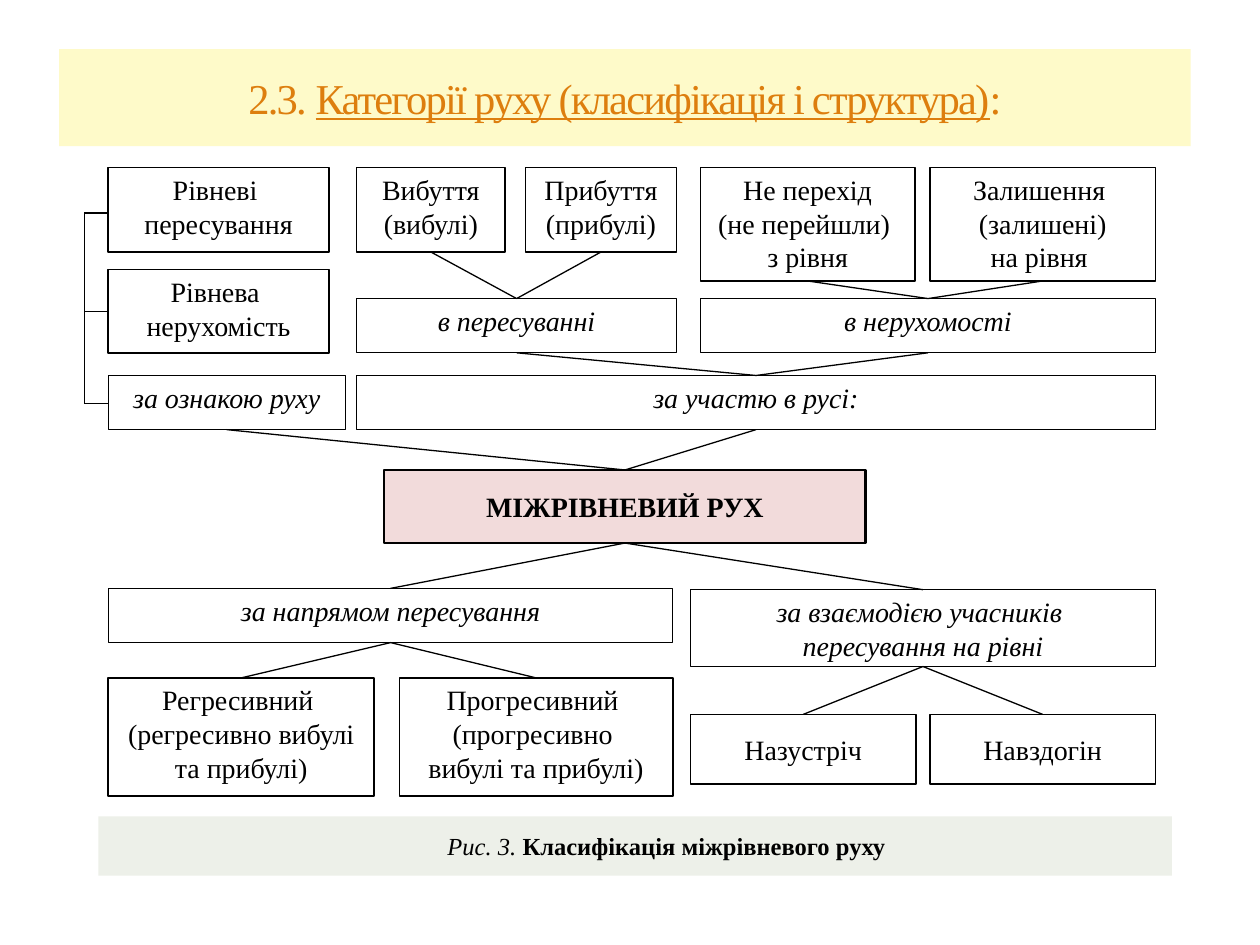
from lxml import etree
from pptx import Presentation
from pptx.dml.color import RGBColor
from pptx.enum.shapes import MSO_CONNECTOR, MSO_SHAPE
from pptx.enum.text import MSO_ANCHOR, PP_ALIGN
from pptx.oxml.ns import qn
from pptx.util import Inches, Pt

RECT = MSO_SHAPE.RECTANGLE
LINE = MSO_CONNECTOR.STRAIGHT
TOP, MIDDLE = MSO_ANCHOR.TOP, MSO_ANCHOR.MIDDLE
CENTER = PP_ALIGN.CENTER
UP, LEFT, DOWN = 0, 1, 2  # connection sites of a rectangle

FONT = "Times New Roman"
COLORS = {"ink": "000000", "paper": "FFFFFF", "root": "F2DBDB",
          "band": "FEFAC9", "title": "DD7E0E", "foot": "EDF0E9"}
PAD = (0.09, 0.04, 0.09, 0.04)
FLAT = (0, 0, 0, 0)
ROW = 0.43


def color(name):
    return RGBColor.from_string(COLORS[name])


def write(para, text, size=16, ink="ink", bold=False, italic=False,
          under=False, space=0):
    run = para.add_run()
    run.text = text
    font = run.font
    font.name, font.size = FONT, Pt(size)
    font.bold, font.italic, font.underline = bold, italic, under
    font.color.rgb = color(ink)
    if space:
        run._r.get_or_add_rPr().set("spc", str(space * 100))


def panel(slide, x, y, w, h, fill="paper", line=0, pad=PAD, anchor=TOP):
    """Add a rectangle ready for centred text."""
    shape = slide.shapes.add_shape(RECT, *map(Inches, (x, y, w, h)))
    shape.shadow.inherit = False
    shape.fill.solid()
    shape.fill.fore_color.rgb = color(fill)
    if line:
        shape.line.color.rgb = color("ink")
        shape.line.width = Pt(line)
    else:
        shape.line.fill.background()
    frame = shape.text_frame
    frame.word_wrap = True
    frame.vertical_anchor = anchor
    (frame.margin_left, frame.margin_top,
     frame.margin_right, frame.margin_bottom) = map(Inches, pad)
    frame.paragraphs[0].alignment = CENTER
    return shape


def leaf(slide, text, x, y, w, h, line=1, pad=PAD, anchor=TOP, fill="paper",
         **style):
    shape = panel(slide, x, y, w, h, fill, line, pad, anchor)
    frame = shape.text_frame
    for i, part in enumerate(text.split("\n")):
        para = frame.add_paragraph() if i else frame.paragraphs[0]
        para.alignment = CENTER
        write(para, part, **style)
    return shape


def group(slide, text, x, y, w, h=ROW):
    """Add a box that names a ground of division."""
    return leaf(slide, text, x, y, w, h, line=0.75, italic=True)


def stroke(slide, x1=0, y1=0, x2=0, y2=0):
    line = slide.shapes.add_connector(LINE, *map(Inches, (x1, y1, x2, y2)))
    line.line.color.rgb = color("ink")
    line.line.width = Pt(0.75)
    etree.SubElement(line._element.spPr, qn("a:effectLst"))
    return line


def join(slide, node, site, kids):
    """Link one side of a node to the facing side of each kid."""
    for kid in kids:
        line = stroke(slide)
        line.begin_connect(node, site)
        line.end_connect(kid, UP if site == DOWN else DOWN)


def title(slide, x, y, w, h):
    shape = panel(slide, x, y, w, h, "band", pad=FLAT, anchor=MIDDLE)
    para = shape.text_frame.paragraphs[0]
    parts = (("2.3. ", False),
             ("Категорії руху (класифікація і структура)", True),
             (":", False))
    for text, under in parts:
        write(para, text, size=24.3, ink="title", under=under, space=-1)


def signs(slide, x, y):
    """Place the left column and its bracket; return the lowest box."""
    leaf(slide, "Рівневі \nпересування", x, y, 1.75, 0.67)
    leaf(slide, "Рівнева \nнерухомість", x, y + 0.81, 1.75, 0.66)
    base = group(slide, "за ознакою руху", x, y + 1.65, 1.88)
    stem, ends = x - 0.19, (y + 0.36, y + 1.14, y + 1.87)
    stroke(slide, stem, ends[0], stem, ends[-1])
    for end in ends:
        stroke(slide, stem, end, x, end)
    return base


def shares(slide, x, y, w):
    """Place the tree by share in movement; return its lowest box."""
    base = group(slide, "за участю в русі:", x, y + 1.65, w)
    halves = (
        ("в пересуванні", 0, 2.54, 0.67,
         (("Вибуття\n(вибулі)", 0, 1.18), ("Прибуття\n(прибулі)", 1.34, 1.2))),
        ("в нерухомості", 2.73, 3.61, 0.9,
         (("Не перехід\n(не перейшли) \nз рівня", 2.73, 1.7),
          ("Залишення \n(залишені)\nна рівня ", 4.55, 1.79))),
    )
    for name, dx, wide, high, kids in halves:
        node = group(slide, name, x + dx, y + 1.04, wide)
        tips = [leaf(slide, text, x + kx, y, kw, high)
                for text, kx, kw in kids]
        join(slide, node, UP, tips)
        join(slide, base, UP, [node])
    return base


def course(slide, x, y, w):
    """Place the tree by direction; return its top box."""
    node = group(slide, "за напрямом пересування", x, y, w)
    back = leaf(slide, "Регресивний \n(регресивно вибулі та прибулі)",
                x, y + 0.71, 2.11, 0.94)
    ahead = leaf(slide, "Прогресивний \n(прогресивно \nвибулі та прибулі)",
                 x + w - 2.17, y + 0.71, 2.17, 0.94)
    join(slide, node, DOWN, (back, ahead))
    return node


def contact(slide, x, y, w):
    """Place the tree by interaction; return its top box."""
    node = group(slide, "за взаємодією учасників \nпересування на рівні",
                 x, y, w, 0.61)
    wide = 1.79
    kids = [leaf(slide, text, left, y + 0.99, wide, 0.55, pad=FLAT,
                 anchor=MIDDLE)
            for text, left in (("Назустріч", x), ("Навздогін", x + w - wide))]
    join(slide, node, DOWN, kids)
    return node


def caption(slide, x, y, w, h):
    shape = panel(slide, x, y, w, h, "foot", pad=(0.5, 0, 0, 0),
                  anchor=MIDDLE)
    para = shape.text_frame.paragraphs[0]
    write(para, "Рис. 3. ", size=14, italic=True)
    write(para, "Класифікація міжрівневого руху", size=14, bold=True)


def main():
    deck = Presentation()
    deck.slide_width, deck.slide_height = Inches(10), Inches(7.5)
    slide = deck.slides.add_slide(deck.slide_layouts[6])
    title(slide, 0.47, 0.39, 8.98, 0.77)
    root = leaf(slide, "МІЖРІВНЕВИЙ РУХ", 3.05, 3.73, 3.82, 0.58, line=1.25,
                pad=FLAT, anchor=MIDDLE, fill="root", bold=True)
    above = signs(slide, 0.86, 1.33), shares(slide, 2.83, 1.33, 6.34)
    below = course(slide, 0.86, 4.67, 4.48), contact(slide, 5.48, 4.68, 3.69)
    join(slide, root, UP, above)
    join(slide, root, DOWN, below)
    caption(slide, 0.78, 6.48, 8.52, 0.47)
    deck.save("out.pptx")


if __name__ == "__main__":
    main()
